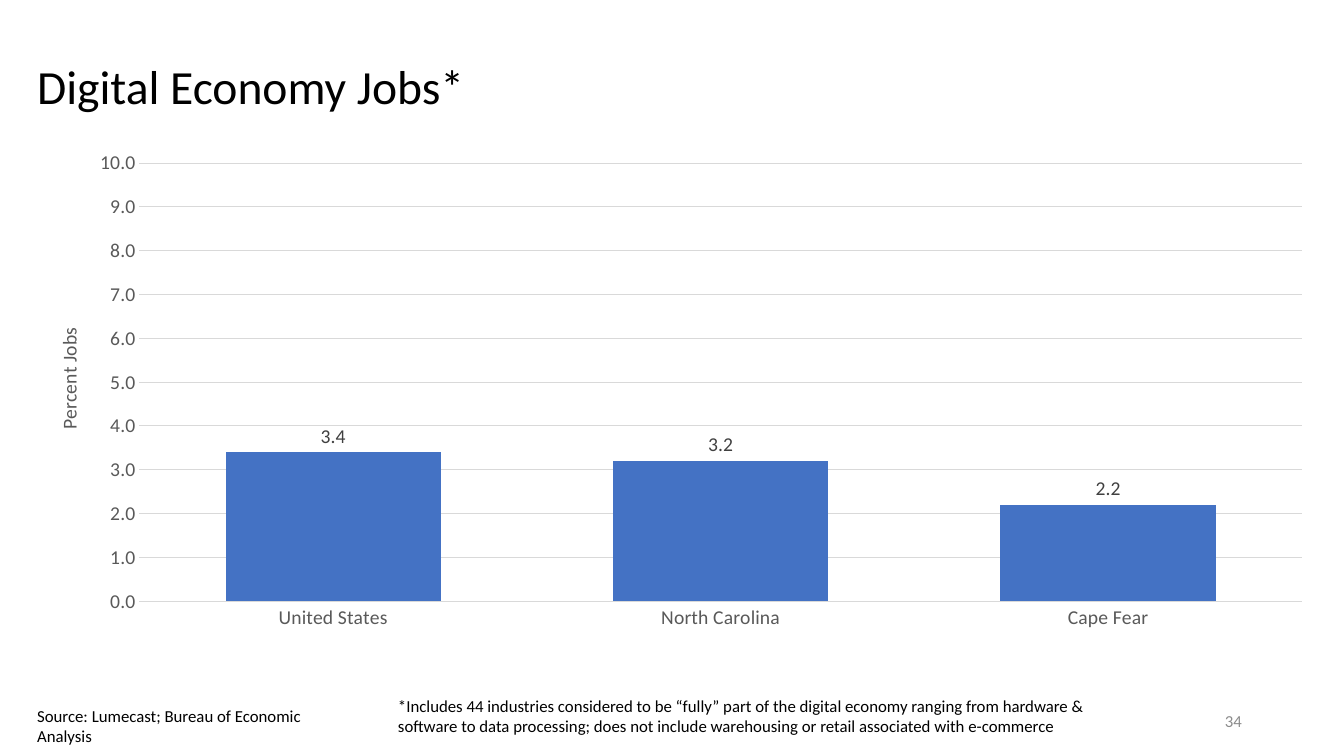
from lxml import etree
from pptx import Presentation
from pptx.chart.data import CategoryChartData
from pptx.dml.color import RGBColor
from pptx.enum import chart as ch, text
from pptx.oxml.ns import qn
from pptx.util import Pt

# Content
TITLE = "Digital Economy Jobs*"
SOURCE = "Source: Lumecast; Bureau of Economic Analysis"
FOOTNOTE = ("*Includes 44 industries considered to be “fully” part of the digital "
            "economy ranging from hardware & software to data processing; does not "
            "include warehousing or retail associated with e-commerce")
PAGE = "34"
AXIS_TITLE = "Percent Jobs"
JOBS = {"United States": 3.4, "North Carolina": 3.2, "Cape Fear": 2.2}

THEME = {
    "font": "Calibri",
    "black": "000000", "page": "8C8C8C", "axis": "595959",
    "label": "404040", "grid": "D9D9D9", "bar": "4472C4",
    "title_size": 34, "chart_size": 14, "note_size": 12,
}

# Places in points: left, top, width, height
LEFT = 19.44
TITLE_BOX = (LEFT, 24.48, 918.72, 78.48)
CHART_BOX = (LEFT, 102.96, 921.6, 388.8)
SOURCE_BOX = (LEFT, 500.4, 242.64, 21.6)
FOOTNOTE_BOX = (277.2, 493.2, 509.04, 36)
PAGE_BOX = (678.24, 500.4, 216, 28.8)

# Places inside the chart, as shares of its frame
PLOT_PLACE = {"x": 0.087, "y": 0.035, "w": 0.901, "h": 0.805}
AXIS_TITLE_PLACE = {"x": 0.019, "y": 0.33}


def style_font(font, size, color):
    font.name = THEME["font"]
    font.size = Pt(THEME[size])
    font.bold = False
    font.color.rgb = RGBColor.from_string(THEME[color])


def add_text(slide, box, words, size="note_size", color="black",
             anchor=text.MSO_ANCHOR.TOP, align=text.PP_ALIGN.LEFT, spacing=1.0):
    tf = slide.shapes.add_textbox(*map(Pt, box)).text_frame
    tf.word_wrap = True
    tf.vertical_anchor = anchor
    p = tf.paragraphs[0]
    p.alignment = align
    p.line_spacing = spacing
    r = p.add_run()
    r.text = words
    style_font(r.font, size, color)


def set_layout(parent, index, place, inner=False):
    """Fix a chart part at the given shares of the chart frame."""
    layout = parent.find(qn("c:layout"))
    if layout is None:
        layout = etree.Element(qn("c:layout"))
        parent.insert(index, layout)
    manual = etree.SubElement(layout, qn("c:manualLayout"))
    values = {"layoutTarget": "inner"} if inner else {}
    values.update({"xMode": "edge", "yMode": "edge"})
    values.update(place)
    for tag, value in values.items():
        etree.SubElement(manual, qn("c:" + tag)).set("val", str(value))


def style_axis(axis):
    axis.major_tick_mark = axis.minor_tick_mark = ch.XL_TICK_MARK.NONE
    style_font(axis.tick_labels.font, "chart_size", "axis")


def draw_grey(line):
    line.color.rgb = RGBColor.from_string(THEME["grid"])
    line.width = Pt(0.75)


def add_jobs_chart(slide):
    data = CategoryChartData(number_format="0.0")
    data.categories = list(JOBS)
    data.add_series("Series 1", list(JOBS.values()))
    chart = slide.shapes.add_chart(
        ch.XL_CHART_TYPE.COLUMN_CLUSTERED, *map(Pt, CHART_BOX), data).chart
    chart.has_legend = chart.has_title = False
    style_font(chart.font, "chart_size", "black")

    # Axes
    cat, val = chart.category_axis, chart.value_axis
    style_axis(cat)
    style_axis(val)
    draw_grey(cat.format.line)
    val.format.line.fill.background()
    val.minimum_scale, val.maximum_scale, val.major_unit = 0, 10, 1
    val.tick_labels.number_format = "0.0"
    val.tick_labels.number_format_is_linked = False
    val.has_major_gridlines = True
    draw_grey(val.major_gridlines.format.line)
    r = val.axis_title.text_frame.paragraphs[0].add_run()
    r.text = AXIS_TITLE
    style_font(r.font, "chart_size", "axis")

    # Columns and their values
    plot = chart.plots[0]
    plot.gap_width = 80
    plot.vary_by_categories = False
    fill = plot.series[0].format.fill
    fill.solid()
    fill.fore_color.rgb = RGBColor.from_string(THEME["bar"])
    labels = plot.series[0].data_labels
    labels.show_value = True
    labels.position = ch.XL_LABEL_POSITION.OUTSIDE_END
    labels.number_format = "0.0"
    labels.number_format_is_linked = False
    style_font(labels.font, "chart_size", "label")

    # Fixed places
    plot_area = chart.element.find(".//" + qn("c:plotArea"))
    set_layout(plot_area, 0, PLOT_PLACE, inner=True)
    set_layout(plot_area.find(".//" + qn("c:title")), 1, AXIS_TITLE_PLACE)


def main():
    prs = Presentation()
    prs.slide_width, prs.slide_height = Pt(960), Pt(540)
    slide = prs.slides.add_slide(prs.slide_layouts[6])
    middle = text.MSO_ANCHOR.MIDDLE

    add_text(slide, TITLE_BOX, TITLE, "title_size", anchor=middle, spacing=0.9)
    add_text(slide, PAGE_BOX, PAGE, color="page", anchor=middle,
             align=text.PP_ALIGN.RIGHT)
    add_text(slide, SOURCE_BOX, SOURCE)
    add_jobs_chart(slide)
    add_text(slide, FOOTNOTE_BOX, FOOTNOTE)

    prs.save("out.pptx")


if __name__ == "__main__":
    main()
